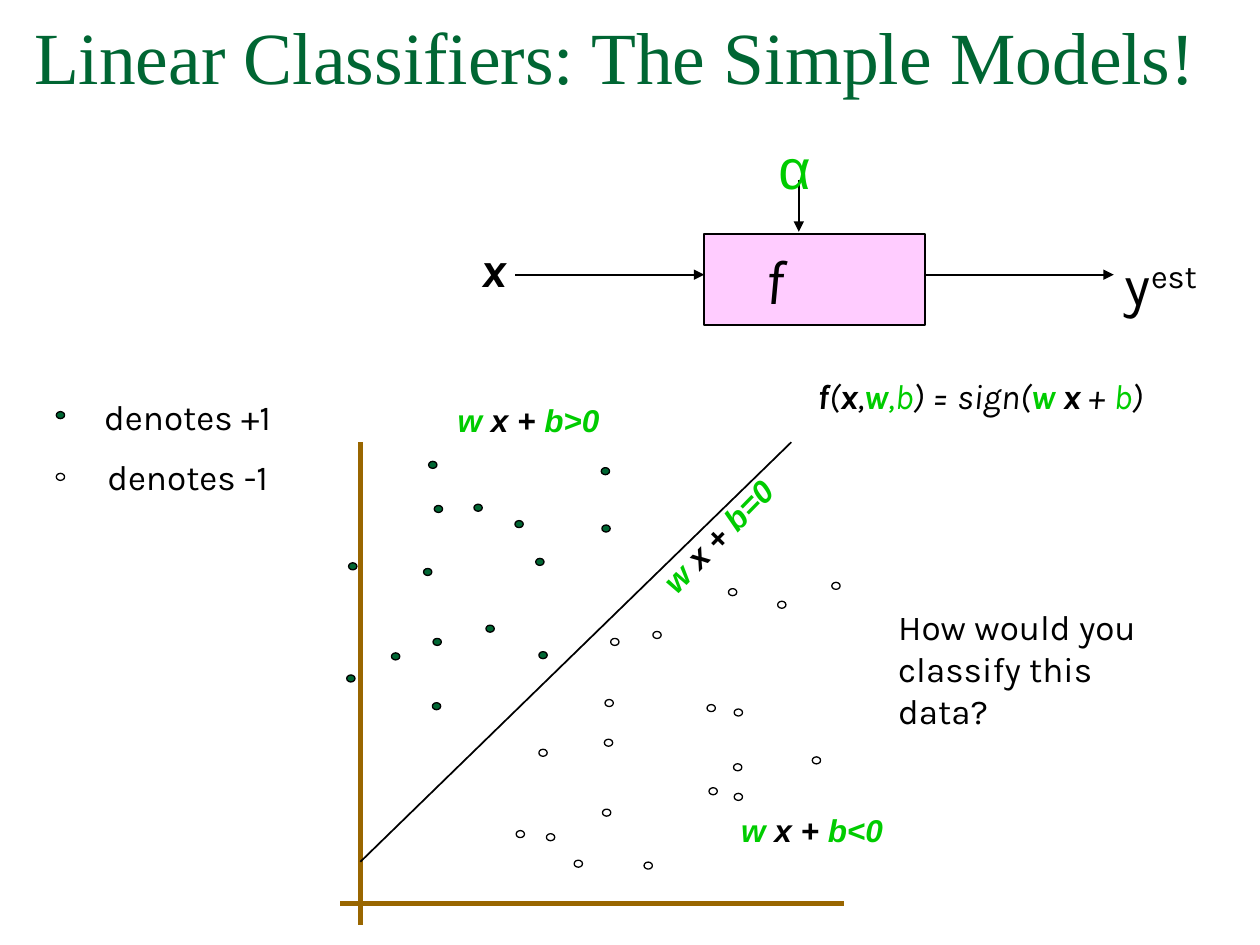
from lxml.etree import SubElement
from pptx import Presentation
from pptx.dml.color import RGBColor
from pptx.enum.shapes import MSO_CONNECTOR, MSO_SHAPE
from pptx.enum.text import MSO_ANCHOR, MSO_AUTO_SIZE, PP_ALIGN
from pptx.oxml.ns import qn
from pptx.util import Inches, Pt

BLACK = RGBColor(0x00, 0x00, 0x00)
WHITE = RGBColor(0xFF, 0xFF, 0xFF)
FOREST = RGBColor(0x00, 0x66, 0x33)
GREEN = RGBColor(0x00, 0xCC, 0x00)
PINK = RGBColor(0xFF, 0xCC, 0xFF)
BROWN = RGBColor(0x99, 0x66, 0x00)

# Format values of a run
PLAIN = dict(bold=False, italic=False)
SLANT = dict(bold=False, italic=True)
STRONG = dict(bold=True, italic=True)

LEFT, MID = PP_ALIGN.LEFT, PP_ALIGN.CENTER
CENTRED = dict(vertical_anchor=MSO_ANCHOR.MIDDLE)

deck = Presentation()
deck.slide_width, deck.slide_height = Inches(10), Inches(7.5)
slide = deck.slides.add_slide(deck.slide_layouts[5])
shapes = slide.shapes
UNIT = deck.slide_width / 100  # the slide is 100 columns by 75 rows


def grid(*cells):
    """Turn columns and rows into lengths."""
    return [round(cell * UNIT) for cell in cells]


def write(shape, paras, size, face="Karla", align=MID, **form):
    """Fill a shape; each paragraph is a list of (text, format, colour)."""
    frame = shape.text_frame
    frame.auto_size = MSO_AUTO_SIZE.NONE
    frame.word_wrap = True
    for key, value in form.items():
        setattr(frame, key, value)
    for num, runs in enumerate(paras):
        para = frame.add_paragraph() if num else frame.paragraphs[0]
        para.alignment = align
        if num:
            para.space_before = Pt(10.5)
        for text, look, tint in runs:
            run = para.add_run()
            run.text = text
            for key, value in dict(look, size=Pt(size), name=face).items():
                setattr(run.font, key, value)
            run.font.color.rgb = tint
    return shape


# Title
title = shapes.title
title.left, title.top, title.width, title.height = grid(0.3, 0.9, 97.2, 7.5)
write(title, [[("Linear Classifiers: The Simple Models!", PLAIN, FOREST)]],
      42, "Times New Roman", LEFT, vertical_anchor=MSO_ANCHOR.BOTTOM,
      margin_left=Inches(0.24), margin_right=0)

# Function box, with its letter left of the middle
box = shapes.add_shape(MSO_SHAPE.RECTANGLE, *grid(55.9, 18.6, 17.5, 7.2))
box.shadow.inherit = False
box.fill.solid()
box.fill.fore_color.rgb = PINK
box.line.color.rgb = BLACK
box.line.width = Pt(1)
write(box, [[("f", SLANT, BLACK)]], 36, margin_right=Inches(0.74), **CENTRED)

# Arrows into and out of the box, axes and dividing line
FLOW = 21.8             # row of the arrows from x to y
AXIS_X, AXIS_Y = 28.6, 71.7
TOP = 35.1              # row where the plot starts
LINES = [
    # from and to, colour, points, arrowhead
    ((40.9, FLOW, 55.9, FLOW), BLACK, 1, True),
    ((73.4, FLOW, 88.4, FLOW), BLACK, 1, True),
    ((63.4, 14.3, 63.4, 18.4), BLACK, 1, True),
    ((AXIS_X, TOP, AXIS_X, 73.4), BROWN, 3, False),
    ((27, AXIS_Y, 67, AXIS_Y), BROWN, 3, False),
    ((AXIS_X, 68.4, 62.8, TOP), BLACK, 1, False),
]
for ends, tint, points, arrow in LINES:
    line = shapes.add_connector(MSO_CONNECTOR.STRAIGHT, *grid(*ends))
    line.line.color.rgb = tint
    line.line.width = Pt(points)
    props = line._element.spPr
    if arrow:
        SubElement(props.find(qn("a:ln")), qn("a:tailEnd"), type="triangle")
    SubElement(props, qn("a:effectLst"))

# Dots of both classes; the first two are the legend's marks
DOT_WIDE, DOT_HIGH = 0.66, 0.56
CLASSES = {
    FOREST: [
        (4.8, 32.95), (27.85, 53.85), (48.1, 41.95), (37.95, 40.3),
        (43.1, 52), (33.95, 45.4), (34.8, 40.4), (34.7, 50.95),
        (42.85, 44.6), (34.65, 56.05), (48.05, 37.4), (34.35, 36.9),
        (38.9, 49.9), (31.4, 52.1), (41.2, 41.6), (28, 44.95),
    ],
    WHITE: [
        (4.8, 37.85), (41.3, 66.2), (48.8, 50.95), (56.45, 56.2),
        (43.1, 59.75), (66.35, 46.5), (58.55, 60.9), (52.15, 50.4),
        (64.8, 60.35), (45.9, 68.55), (58.6, 56.55), (48.35, 55.8),
        (62.05, 48), (58.15, 47), (56.6, 62.8), (51.45, 68.7),
        (48.15, 64.5), (48.3, 58.95), (43.7, 66.45), (58.6, 63.25),
    ],
}
for tint, centres in CLASSES.items():
    for col, row in centres:
        dot = shapes.add_shape(
            MSO_SHAPE.OVAL,
            *grid(col - DOT_WIDE / 2, row - DOT_HIGH / 2, DOT_WIDE, DOT_HIGH))
        dot.shadow.inherit = False
        dot.fill.solid()
        dot.fill.fore_color.rgb = tint
        dot.line.color.rgb = BLACK
        dot.line.width = Pt(0.75)

# Input and parameter of the function
write(shapes.add_textbox(*grid(35.8, 18.4, 6.7, 5.7)),
      [[("x", STRONG, BLACK)]], 28)
write(shapes.add_textbox(*grid(60.8, 10.1, 4.2, 6.3)),
      [[("α", PLAIN, GREEN)]], 32, "Arial")

# Output, with a raised second run
output = write(shapes.add_textbox(*grid(88.3, 19.3, 9.2, 6.3)),
               [[("y", PLAIN, BLACK), ("est", PLAIN, BLACK)]], 32, align=LEFT)
raised = output.text_frame.paragraphs[0].runs[1]
raised._r.get_or_add_rPr().set("baseline", "30000")

# Legend
write(shapes.add_textbox(*grid(4.5, 30.9, 20.8, 9.3)),
      [[(f"denotes {sign}", PLAIN, BLACK)] for sign in ("+1", "-1")], 20)

# Formula: weights and offset are green, vectors are bold
FORMULA = [
    ("f", STRONG, BLACK), ("(", SLANT, BLACK), ("x", STRONG, BLACK),
    (",", SLANT, BLACK), ("w", STRONG, GREEN), (",b", SLANT, GREEN),
    (") = sign(", SLANT, BLACK), ("w", STRONG, GREEN),
    (" x ", STRONG, BLACK), ("+ ", SLANT, BLACK), ("b", SLANT, GREEN),
    (")", SLANT, BLACK),
]
write(shapes.add_textbox(*grid(60.3, 29.2, 35, 4.3)), [FORMULA], 20)

# Question
write(shapes.add_textbox(*grid(70.3, 47.6, 24.2, 7.7)),
      [[("How would you classify this data?", PLAIN, BLACK)]], 20, align=LEFT)

# Labels along the dividing line and on both sides of it
SIDES = [
    # column, row, turn, end of the label
    (43.6, 40.9, 314.4, "b=0"),
    (51.1, 64.2, 0, "b<0"),
    (28.6, 31.7, 0, "b>0"),
]
for col, row, turn, end in SIDES:
    label = shapes.add_textbox(*grid(col, row, 26.7, 3.3))
    label.rotation = turn
    runs = [("w", STRONG, GREEN), (" x + ", STRONG, BLACK),
            (end, STRONG, GREEN)]
    write(label, [runs], 18, "Arial", **CENTRED)

deck.save("out.pptx")
